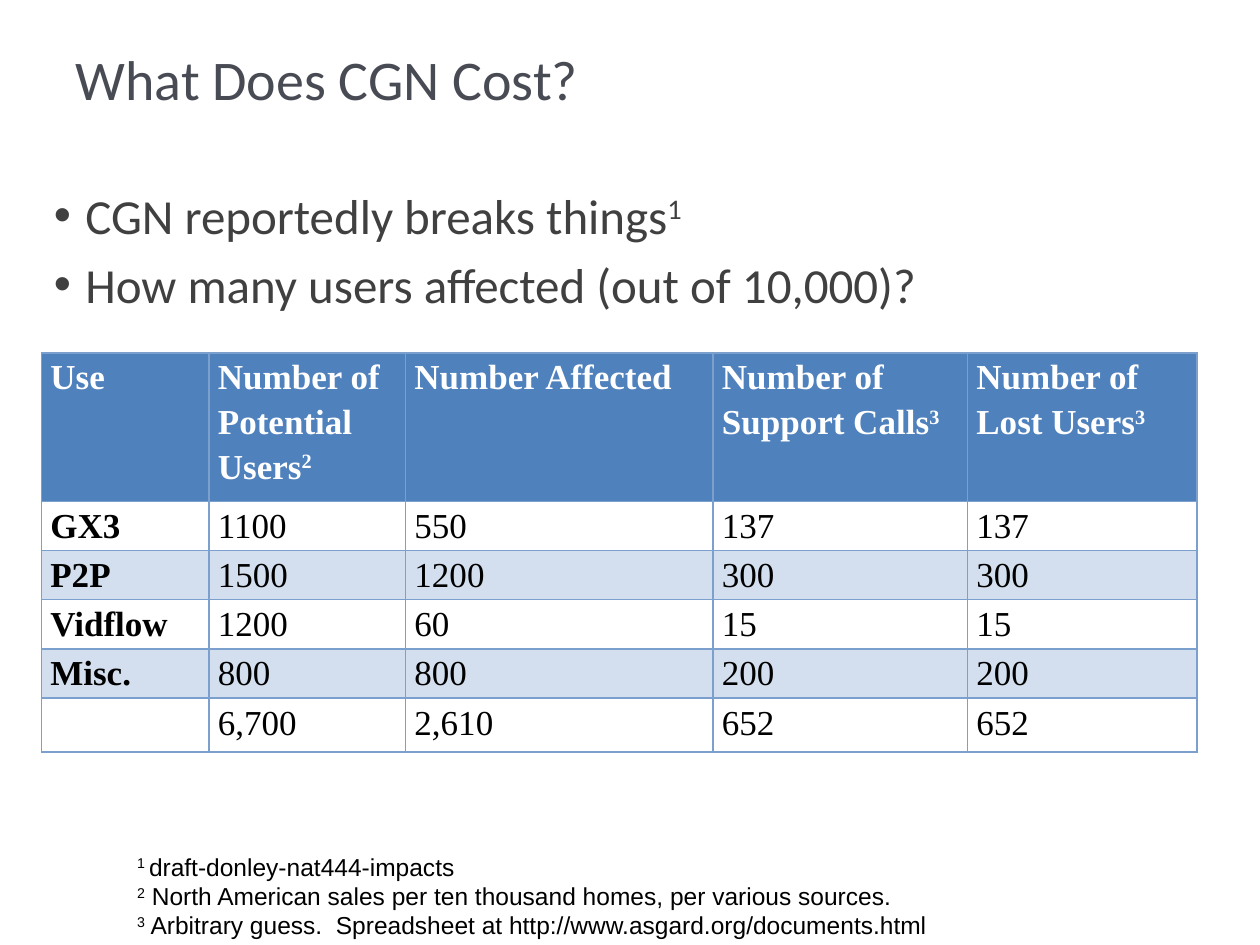
from pptx import Presentation
from pptx.dml.color import RGBColor
from pptx.enum.text import MSO_ANCHOR, MSO_AUTO_SIZE
from pptx.oxml.ns import qn
from pptx.util import Inches, Pt
from lxml.etree import SubElement

TITLE = dict(name="Calibri", size=Pt(32), color="484B54")
BODY = dict(name="Calibri", size=Pt(28), color="404040")
NOTE = dict(name="Arial", size=Pt(14), color="000000")
CELL = dict(name="Times New Roman", size=Pt(20), color="000000", bold=False)
LABEL = {**CELL, "bold": True}
HEADER = {**LABEL, "color": "FFFFFF"}

COLUMNS = [1.33, 1.56, 2.44, 2.02, 1.82]
ROWS = [1.18, 0.39, 0.39, 0.39, 0.39, 0.43]
COSTS = [
    ["Use", "Number of Potential Users^2", "Number Affected",
     "Number of Support Calls^3", "Number of Lost Users^3"],
    ["GX3", "1100", "550", "137", "137"],
    ["P2P", "1500", "1200", "300", "300"],
    ["Vidflow", "1200", "60", "15", "15"],
    ["Misc.", "800", "800", "200", "200"],
    ["", "6,700", "2,610", "652", "652"],
]
BULLETS = ["CGN reportedly breaks things^1", "How many users affected (out of 10,000)?"]
NOTES = [
    "^1 ^draft-donley-nat444-impacts",
    "^2^ North American sales per ten thousand homes, per various sources.",
    "^3^ Arbitrary guess.  Spreadsheet at http://www.asgard.org/documents.html",
]


def rgb(value):
    return RGBColor.from_string(value)


def set_font(font, style):
    for key, value in style.items():
        if key == "color":
            font.color.rgb = rgb(value)
        else:
            setattr(font, key, value)


def add_runs(p, text, style):
    for i, part in enumerate(text.split("^")):
        if part:
            r = p.add_run()
            r.text = part
            set_font(r.font, style)
            if i % 2:
                r.font._element.set("baseline", "30000")


def place(shape, *box):
    for key, value in zip(("left", "top", "width", "height"), box):
        setattr(shape, key, Inches(value))


def add_title(s, text):
    title = s.shapes.title
    place(title, 0.5, 0.3, 8.26, 1.25)
    tf = title.text_frame
    tf.vertical_anchor = MSO_ANCHOR.TOP
    p = tf.paragraphs[0]
    p.alignment = 1
    add_runs(p, text, TITLE)


def add_text(s, box, lines, style, left, hanging=0, gap=0, bullet=None):
    tf = s.shapes.add_textbox(*map(Inches, box)).text_frame
    tf.word_wrap = True
    for i, line in enumerate(lines):
        p = tf.add_paragraph() if i else tf.paragraphs[0]
        if i:
            p.space_before = Pt(gap)
        pPr = p._p.get_or_add_pPr()
        pPr.set("marL", str(Inches(left)))
        pPr.set("indent", str(-Inches(hanging)))
        if bullet:
            SubElement(pPr, qn("a:buFont"), typeface="Arial")
            SubElement(pPr, qn("a:buChar"), char=bullet)
        add_runs(p, line, style)
    return tf


def add_borders(cell, color):
    tcPr = cell._tc.get_or_add_tcPr()
    for i, side in enumerate(("lnL", "lnR", "lnT", "lnB")):
        ln = tcPr.makeelement(qn(f"a:{side}"), {"w": str(Pt(1))})
        fill = SubElement(ln, qn("a:solidFill"))
        SubElement(fill, qn("a:srgbClr"), val=color)
        tcPr.insert(i, ln)


def format_cell(cell, text, style, fill):
    if fill:
        cell.fill.solid()
        cell.fill.fore_color.rgb = rgb(fill)
    else:
        cell.fill.background()
    add_borders(cell, "7BA0CD")
    if text:
        cell.margin_left = cell.margin_right = Inches(0.07)
        cell.margin_top = cell.margin_bottom = 0
        p = cell.text_frame.paragraphs[0]
        p.line_spacing = 1.15
        add_runs(p, text, style)


def add_cost_table(s):
    box = map(Inches, (0.33, 2.8, sum(COLUMNS), sum(ROWS)))
    table = s.shapes.add_table(len(ROWS), len(COLUMNS), *box).table
    table.first_row = table.horz_banding = False
    for column, width in zip(table.columns, COLUMNS):
        column.width = Inches(width)
    for row, height in zip(table.rows, ROWS):
        row.height = Inches(height)
    for i, values in enumerate(COSTS):
        fill = "4F81BD" if i == 0 else "D3DFEE" if i % 2 == 0 else None
        for j, text in enumerate(values):
            style = HEADER if i == 0 else LABEL if j == 0 else CELL
            format_cell(table.cell(i, j), text, style, fill)


def main():
    prs = Presentation()
    prs.slide_width, prs.slide_height = Inches(10), Inches(7.5)
    s = prs.slides.add_slide(prs.slide_layouts[5])
    add_title(s, "What Does CGN Cost?")
    add_cost_table(s)
    add_text(s, (0.33, 1.42, 9, 1.93), BULLETS, BODY, 0.25, 0.25, 6, "•")
    tf = add_text(s, (0.49, 6.71, 8.1, 0.81), NOTES, NOTE, 0.5)
    tf.auto_size = MSO_AUTO_SIZE.SHAPE_TO_FIT_TEXT
    for p in tf.paragraphs:
        p.level = 1
    prs.save("out.pptx")


if __name__ == "__main__":
    main()
